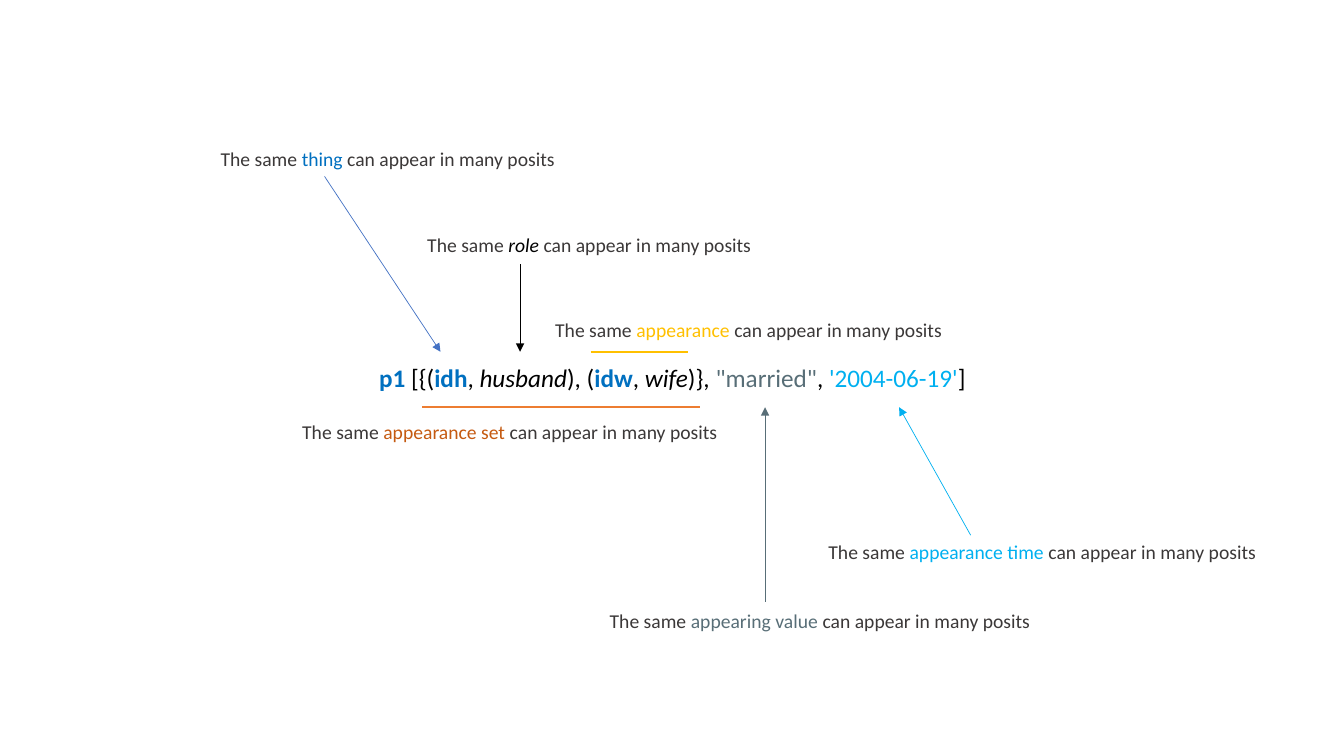
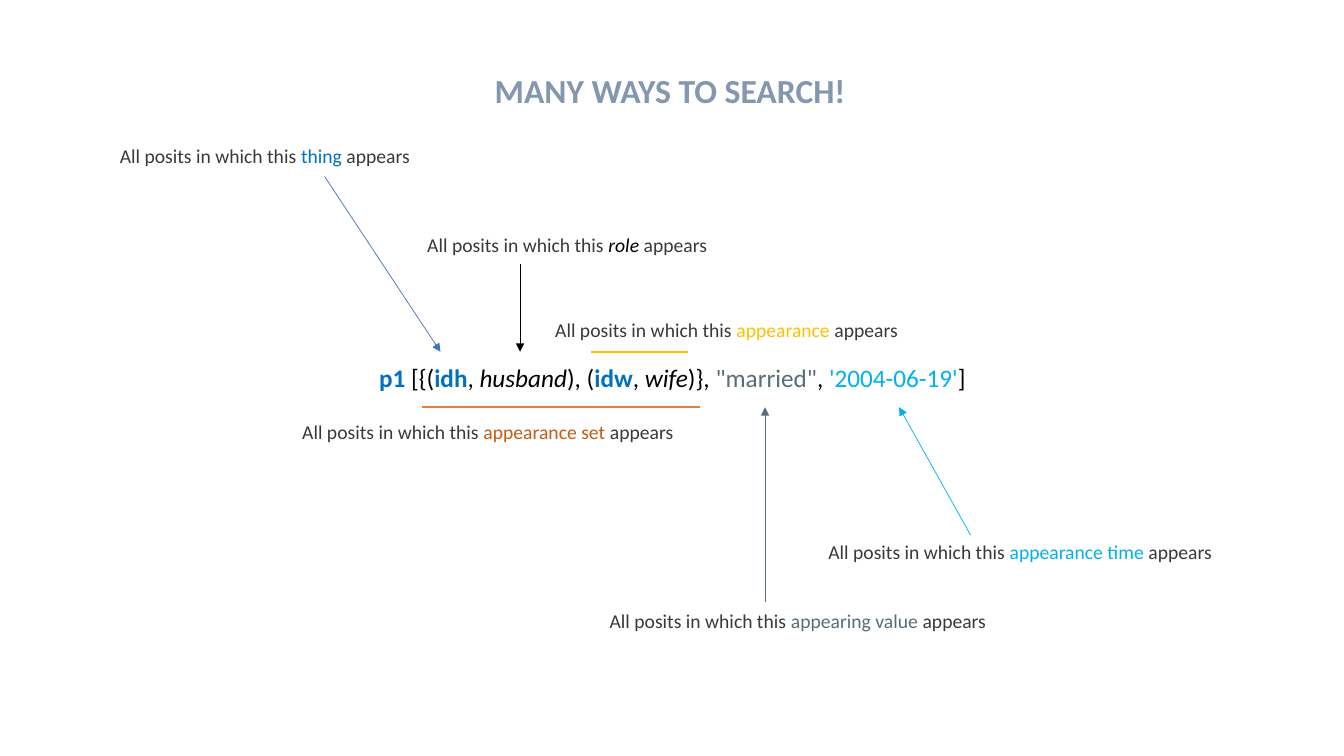
from dataclasses import dataclass

from lxml.etree import SubElement
from pptx import Presentation
from pptx.dml.color import RGBColor
from pptx.enum.shapes import MSO_CONNECTOR
from pptx.enum.text import MSO_AUTO_SIZE, PP_ALIGN
from pptx.oxml.ns import qn
from pptx.slide import Slide
from pptx.util import Inches, Length, Pt

# The slide is a grid of square cells, 40 across and 22.5 down.
COLUMNS = 40
SLIDE_W, SLIDE_H = Inches(40 / 3), Inches(7.5)
CELL = SLIDE_W / COLUMNS

FONT = "Calibri"
BLACK, BODY, TITLE = "000000", "3B3838", "8497B0"
THING, SET, APPEARANCE = "0070C0", "C55A11", "FFC000"
VALUE, TIME = "586E77", "00B0F0"
THING_LINE, SET_LINE = "4472C4", "ED7D31"

ABOVE, BELOW = 10.47, 12.12  # rows that border the posit
CAPTION_H = 1.02


@dataclass(frozen=True)
class Run:
    text: str
    color: str = BLACK
    bold: bool = False
    italic: bool = False


@dataclass(frozen=True)
class Box:
    col: float
    row: float
    cols: float
    rows: float


@dataclass(frozen=True)
class Line:
    start: tuple[float, float]
    end: tuple[float, float]
    color: str
    arrow: bool = True


@dataclass(frozen=True)
class Part:
    """A part of the posit: its term, the caption's place and the line to it."""
    term: Run
    col: float
    row: float
    cols: float
    line: Line


@dataclass(frozen=True)
class Page:
    """Caption wording around each term, and what differs in layout."""
    before: str
    after: str
    narrower: float = 0
    thing_at: tuple[float, float] | None = None
    title: str = ""


POSIT = [
    Run("p1 ", THING, bold=True), Run("[{("),
    Run("idh", THING, bold=True), Run(", "), Run("husband", italic=True),
    Run("), ("),
    Run("idw", THING, bold=True), Run(", "), Run("wife", italic=True),
    Run(")}, "), Run('"married"', VALUE), Run(", "),
    Run("'2004-06-19'", TIME), Run("]"),
]

THING_PART = Part(Run("thing ", THING), 6.27, 4.23, 10.65,
                  Line((9.66, 5.25), (13.11, ABOVE), THING_LINE))
PARTS = [
    Part(Run("appearance set ", SET), 8.7, 12.36, 13.08,
         Line((12.57, BELOW), (20.82, BELOW), SET_LINE, arrow=False)),
    Part(Run("appearance ", APPEARANCE), 16.23, 9.3, 12.21,
         Line((17.58, ABOVE), (20.49, ABOVE), APPEARANCE, arrow=False)),
    THING_PART,
    Part(Run("role ", italic=True), 12.42, 6.78, 10.35,
         Line((15.48, 7.86), (15.48, ABOVE), BLACK)),
    Part(Run("appearing value ", VALUE), 17.85, 17.97, 13.23,
         Line((22.77, 17.91), (22.77, BELOW), VALUE)),
    Part(Run("appearance time ", TIME), 24.36, 15.93, 13.44,
         Line((28.89, 15.93), (26.76, BELOW), TIME)),
]

PAGES = [
    Page("The same ", "can appear in many posits"),
    Page("All posits in which this ", "appears", narrower=1.32,
         thing_at=(3.27, 4.14), title="MANY WAYS TO SEARCH!"),
]


def cells(count: float) -> Length:
    return Length(round(count * CELL))


def rgb(color: str) -> RGBColor:
    return RGBColor.from_string(color)


def add_text(s: Slide, box: Box, runs: list[Run], size: float,
             centred: bool = False) -> None:
    """Centred text wraps in its box; other text stays on one line."""
    sp = s.shapes.add_textbox(cells(box.col), cells(box.row),
                              cells(box.cols), cells(box.rows))
    tf = sp.text_frame
    tf.word_wrap = centred
    tf.auto_size = MSO_AUTO_SIZE.SHAPE_TO_FIT_TEXT
    p = tf.paragraphs[0]
    p.alignment = PP_ALIGN.CENTER if centred else PP_ALIGN.LEFT
    for run in runs:
        r = p.add_run()
        r.text = run.text
        r.font.name = FONT
        r.font.size = Pt(size)
        r.font.bold = run.bold
        r.font.italic = run.italic
        r.font.color.rgb = rgb(run.color)


def add_line(s: Slide, line: Line) -> None:
    start, end = map(cells, line.start), map(cells, line.end)
    cxn = s.shapes.add_connector(MSO_CONNECTOR.STRAIGHT, *start, *end)
    cxn.line.color.rgb = rgb(line.color)
    cxn.line.width = Pt(0.5 if line.arrow else 1.5)
    if line.arrow:
        SubElement(cxn.line._get_or_add_ln(), qn("a:tailEnd"), type="triangle")
    SubElement(cxn._element.spPr, qn("a:effectLst"))


def add_page(prs: Presentation, page: Page) -> None:
    s = prs.slides.add_slide(prs.slide_layouts[6])
    add_text(s, Box(10.8, 10.65, 18.42, 1.2), POSIT, 18, centred=True)
    for part in PARTS:
        col, row = part.col, part.row
        if part is THING_PART and page.thing_at:
            col, row = page.thing_at
        add_line(s, part.line)
        add_text(s, Box(col, row, part.cols - page.narrower, CAPTION_H),
                 [Run(page.before, BODY), part.term, Run(page.after, BODY)], 14)
    if page.title:
        add_text(s, Box(14.43, 1.92, 11.13, 1.5),
                 [Run(page.title, TITLE, bold=True)], 24)


def main() -> None:
    prs = Presentation()
    prs.slide_width, prs.slide_height = SLIDE_W, SLIDE_H
    for page in PAGES:
        add_page(prs, page)
    prs.save("out.pptx")


if __name__ == "__main__":
    main()
